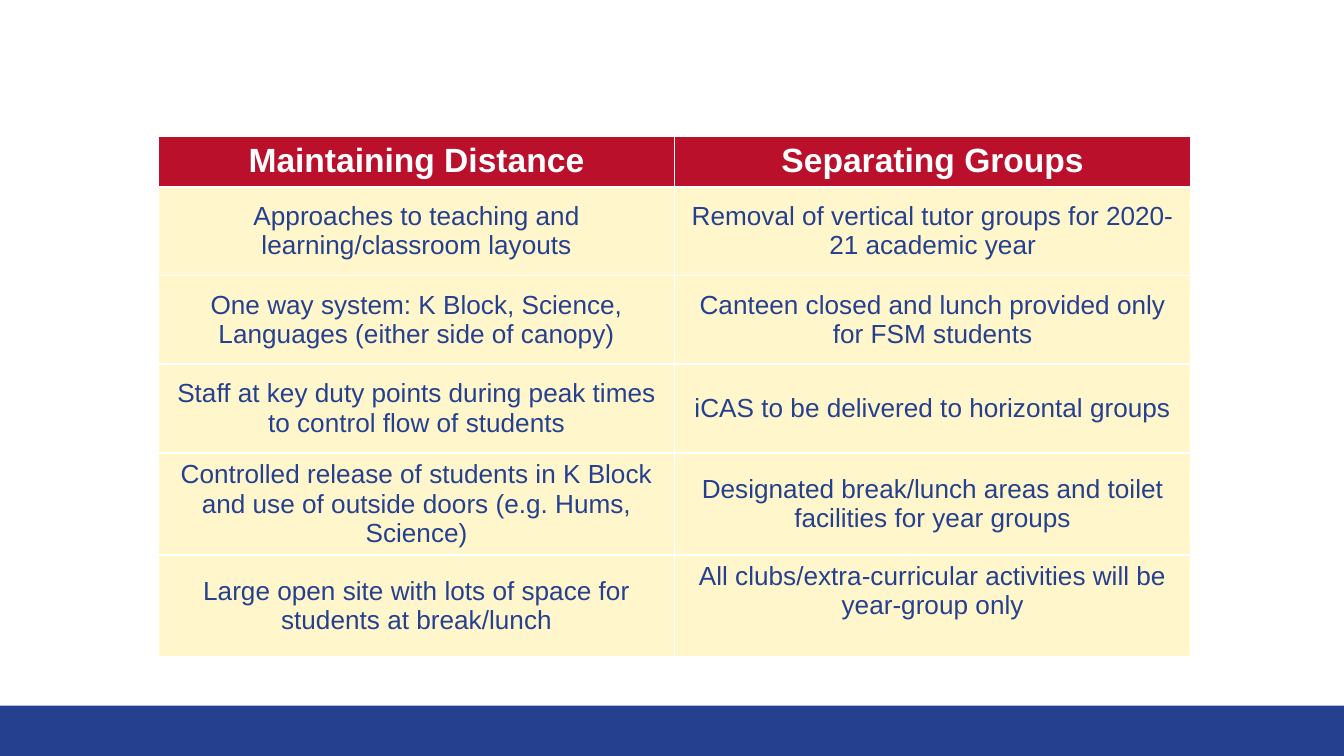
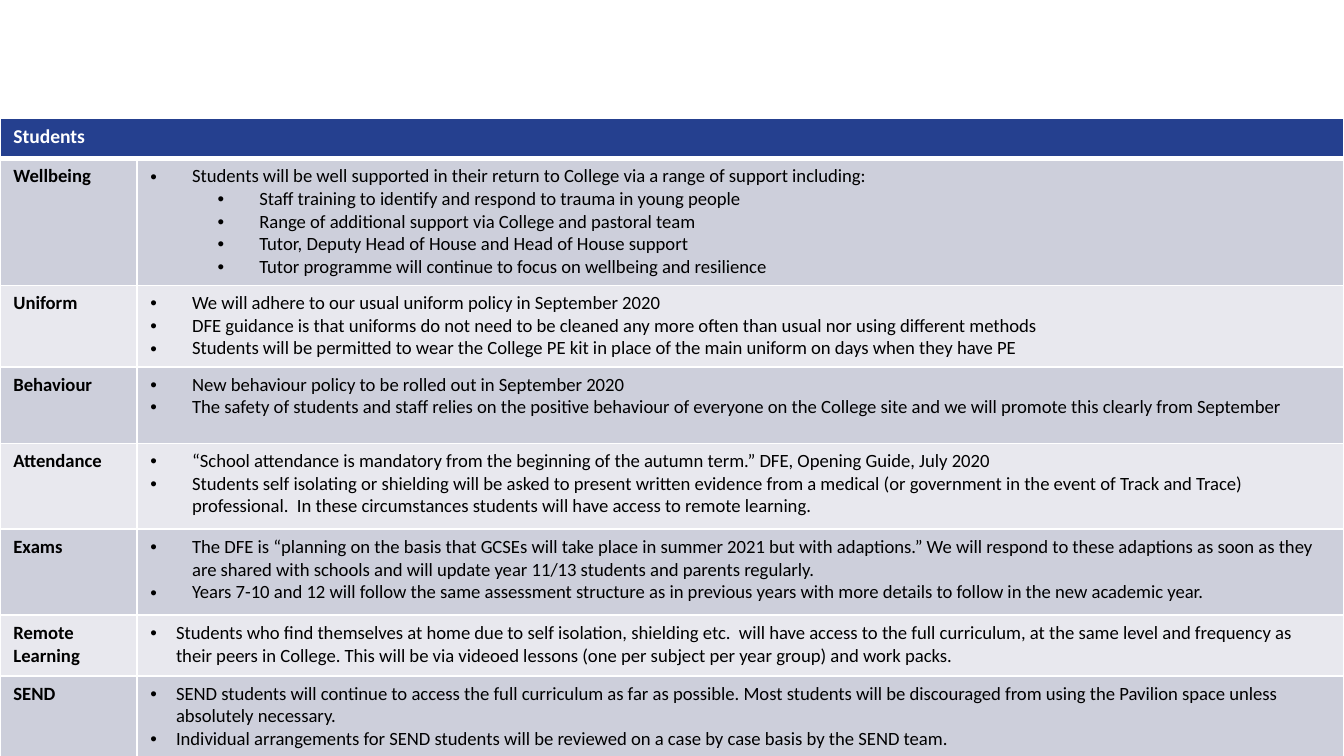
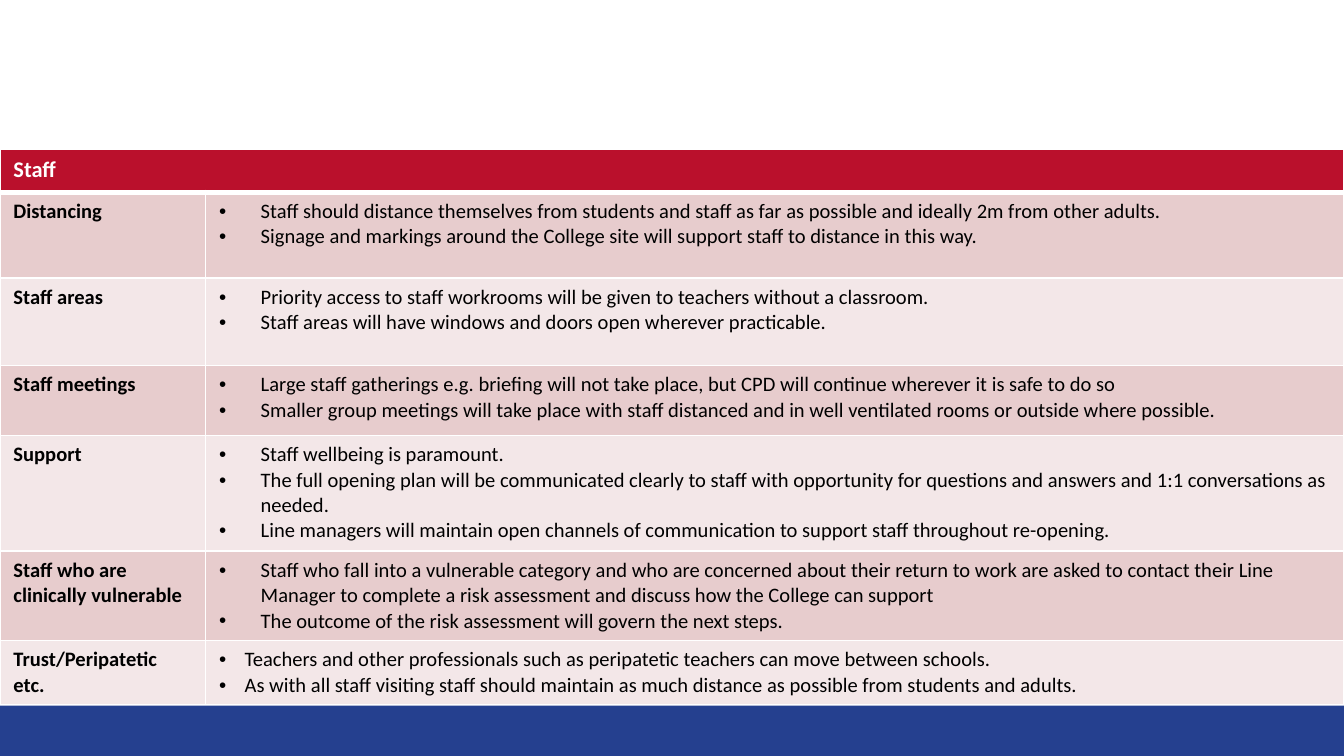
from lxml.etree import SubElement
from pptx import Presentation
from pptx.dml.color import RGBColor
from pptx.enum.shapes import MSO_SHAPE as Shape
from pptx.enum.text import MSO_ANCHOR as Anchor, PP_ALIGN as Align
from pptx.oxml.ns import qn
from pptx.util import Inches, Pt

BLUE = RGBColor(0x25, 0x40, 0x8F)
RED = RGBColor(0xBA, 0x10, 0x2C)
CREAM = RGBColor(0xFF, 0xF6, 0xCC)
WHITE = RGBColor(0xFF, 0xFF, 0xFF)
BLACK = RGBColor(0, 0, 0)
GREYS = RGBColor(0xCD, 0xCF, 0xDB), RGBColor(0xE8, 0xE8, 0xEE)
PINKS = RGBColor(0xE7, 0xCC, 0xCD), RGBColor(0xF3, 0xE7, 0xE8)

WIDE = 10
TALL = WIDE * 9 / 16
BLANK = 6
STEP = 0.5
LOOSE, TIGHT = 0.31, 0.19

STEPS = [
    ("Maintaining Distance", "Separating Groups"),
    ("Approaches to teaching and learning/classroom layouts",
     "Removal of vertical tutor groups for 2020-21 academic year"),
    ("One way system: K Block, Science, Languages (either side of canopy)",
     "Canteen closed and lunch provided only for FSM students"),
    ("Staff at key duty points during peak times to control flow of students",
     "iCAS to be delivered to horizontal groups"),
    ("Controlled release of students in K Block and use of outside doors "
     "(e.g. Hums, Science)",
     "Designated break/lunch areas and toilet facilities for year groups"),
    ("Large open site with lots of space for students at break/lunch",
     "All clubs/extra-curricular activities will be year-group only"),
]

PUPILS = [
    ("Wellbeing", LOOSE, [
        "Students will be well supported in their return to College via a "
        "range of support including:",
        ["Staff training to identify and respond to trauma in young people",
         "Range of additional support via College and pastoral team",
         "Tutor, Deputy Head of House and Head of House support",
         "Tutor programme will continue to focus on wellbeing and resilience"],
    ]),
    ("Uniform", LOOSE, [
        "We will adhere to our usual uniform policy in September 2020",
        "DFE guidance is that uniforms do not need to be cleaned any more "
        "often than usual nor using different methods",
        "Students will be permitted to wear the College PE kit in place of "
        "the main uniform on days when they have PE",
    ]),
    ("Behaviour", LOOSE, [
        "New behaviour policy to be rolled out in September 2020",
        "The safety of students and staff relies on the positive behaviour of "
        "everyone on the College site and we will promote this clearly from "
        "September",
    ]),
    ("Attendance", LOOSE, [
        "“School attendance is mandatory from the beginning of the autumn "
        "term.” DFE, Opening Guide, July 2020",
        "Students self isolating or shielding will be asked to present "
        "written evidence from a medical (or government in the event of "
        "Track and Trace) professional.  In these circumstances students will "
        "have access to remote learning.",
    ]),
    ("Exams", LOOSE, [
        "The DFE is “planning on the basis that GCSEs will take place in "
        "summer 2021 but with adaptions.” We will respond to these adaptions "
        "as soon as they are shared with schools and will update year 11/13 "
        "students and parents regularly.",
        "Years 7-10 and 12 will follow the same assessment structure as in "
        "previous years with more details to follow in the new academic year.",
    ]),
    ("Remote Learning", TIGHT, [
        "Students who find themselves at home due to self isolation, "
        "shielding etc.  will have access to the full curriculum, at the same "
        "level and frequency as their peers in College. This will be via "
        "videoed lessons (one per subject per year group) and work packs.",
    ]),
    ("SEND", TIGHT, [
        "SEND students will continue to access the full curriculum as far as "
        "possible. Most students will be discouraged from using the Pavilion "
        "space unless absolutely necessary.",
        "Individual arrangements for SEND students will be reviewed on a case "
        "by case basis by the SEND team.",
    ]),
]

STAFF = [
    ("Distancing", LOOSE, [
        "Staff should distance themselves from students and staff as far as "
        "possible and ideally 2m from other adults.",
        "Signage and markings around the College site will support staff to "
        "distance in this way.",
    ]),
    ("Staff areas", LOOSE, [
        "Priority access to staff workrooms will be given to teachers without "
        "a classroom.",
        "Staff areas will have windows and doors open wherever practicable.",
    ]),
    ("Staff meetings", LOOSE, [
        "Large staff gatherings e.g. briefing will not take place, but CPD "
        "will continue wherever it is safe to do so",
        "Smaller group meetings will take place with staff distanced and in "
        "well ventilated rooms or outside where possible.",
    ]),
    ("Support", LOOSE, [
        "Staff wellbeing is paramount.",
        "The full opening plan will be communicated clearly to staff with "
        "opportunity for questions and answers and 1:1 conversations as "
        "needed.",
        "Line managers will maintain open channels of communication to "
        "support staff throughout re-opening.",
    ]),
    ("Staff who are clinically vulnerable", LOOSE, [
        "Staff who fall into a vulnerable category and who are concerned "
        "about their return to work are asked to contact their Line Manager "
        "to complete a risk assessment and discuss how the College can "
        "support",
        "The outcome of the risk assessment will govern the next steps.",
    ]),
    ("Trust/Peripatetic etc.", TIGHT, [
        "Teachers and other professionals such as peripatetic teachers can "
        "move between schools.",
        "As with all staff visiting staff should maintain as much distance as "
        "possible from students and adults.",
    ]),
]


def add_band(prs, slide):
    band = slide.shapes.add_shape(
        Shape.RECTANGLE, 0, Inches(5.25), Inches(WIDE), Inches(0.4))
    band.shadow.inherit = False
    band.fill.solid()
    band.fill.fore_color.rgb = BLUE
    band.line.fill.background()
    band.element.nvSpPr.cNvPr.id = 20
    prs.slide_master.element.cSld.spTree.append(band.element)


def add_grid(slide, left, top, cols, rows):
    frame = slide.shapes.add_table(
        len(rows), len(cols), Inches(left), Inches(top),
        Inches(sum(cols)), Inches(sum(rows)))
    grid = frame.table
    for col, width in zip(grid.columns, cols):
        col.width = Inches(width)
    for row, height in zip(grid.rows, rows):
        row.height = Inches(height)
    return grid


def paint(cell, fill, top=1, base=1):
    props = cell._tc.get_or_add_tcPr()
    for side, width in zip("LRTB", (1, 1, top, base)):
        line = SubElement(props, qn(f"a:ln{side}"), w=str(Pt(width)))
        solid = SubElement(line, qn("a:solidFill"))
        SubElement(solid, qn("a:srgbClr"), val=str(WHITE))
    cell.fill.solid()
    cell.fill.fore_color.rgb = fill


def style(para, font, size, color, bold=False):
    for run in para.runs:
        run.font.name = font
        run.font.size = Pt(size)
        run.font.color.rgb = color
        run.font.bold = bold


def write(cell, text, *look):
    para = cell.text_frame.paragraphs[0]
    para.text = text
    style(para, *look)
    return para


def add_dot(para, indent, level):
    para.level = level
    props = para._p.get_or_add_pPr()
    props.set("marL", str(Inches(indent + STEP * level)))
    props.set("indent", str(-Inches(indent)))
    SubElement(props, qn("a:buFont"), typeface="Arial")
    SubElement(props, qn("a:buChar"), char="•")


def flatten(items, level=0):
    for item in items:
        if isinstance(item, list):
            yield from flatten(item, level + 1)
        else:
            yield item, level


def add_list(cell, items, indent, size):
    frame = cell.text_frame
    for index, (text, level) in enumerate(flatten(items)):
        para = frame.add_paragraph() if index else frame.paragraphs[0]
        para.text = text
        add_dot(para, indent, level)
        style(para, "Calibri", size, BLACK)


def add_pairs(slide):
    grid = add_grid(slide, 1.18, 1.01, [3.84, 3.84],
                    [0.37, 0.66, 0.66, 0.66, 0.76, 0.75])
    for row, pair in enumerate(STEPS):
        for col, text in enumerate(pair):
            cell = grid.cell(row, col)
            paint(cell, CREAM if row else RED)
            look = (14, BLUE) if row else (18, WHITE, True)
            write(cell, text, "Arial", *look).alignment = Align.CENTER
            cell.vertical_anchor = Anchor.MIDDLE
    grid.cell(len(STEPS) - 1, 1).margin_bottom = Inches(0.27)


def add_plan(slide, title, topics, top, cols, rows, sizes, fill, tints):
    grid = add_grid(slide, 0, top, cols, rows)
    head, body = sizes
    first, last = grid.cell(0, 0), grid.cell(0, 1)
    first.merge(last)
    for cell in (first, last):
        paint(cell, fill, base=3)
    write(first, title, "Calibri", head, WHITE, True)
    for row, (name, indent, items) in enumerate(topics, 1):
        label, notes = grid.cell(row, 0), grid.cell(row, 1)
        for cell in (label, notes):
            paint(cell, tints[(row - 1) % 2], top=3 if row == 1 else 1)
        write(label, name, "Calibri", body, BLACK, True)
        add_list(notes, items, indent, body)


def main():
    prs = Presentation()
    prs.slide_width, prs.slide_height = Inches(WIDE), Inches(TALL)
    layout = prs.slide_layouts[BLANK]
    steps, pupils, staff = [prs.slides.add_slide(layout) for _ in range(3)]
    add_band(prs, steps)
    add_pairs(steps)
    add_plan(pupils, "Students", PUPILS, 0.88, [1.02, 8.98],
             [0.3, 0.94, 0.6, 0.57, 0.64, 0.64, 0.45, 0.64],
             (10.5, 10), BLUE, GREYS)
    add_plan(staff, "Staff", STAFF, 1.11, [1.53, 8.47],
             [0.32, 0.64, 0.65, 0.52, 0.86, 0.66, 0.47],
             (12, 11), RED, PINKS)
    prs.save("out.pptx")


if __name__ == "__main__":
    main()
